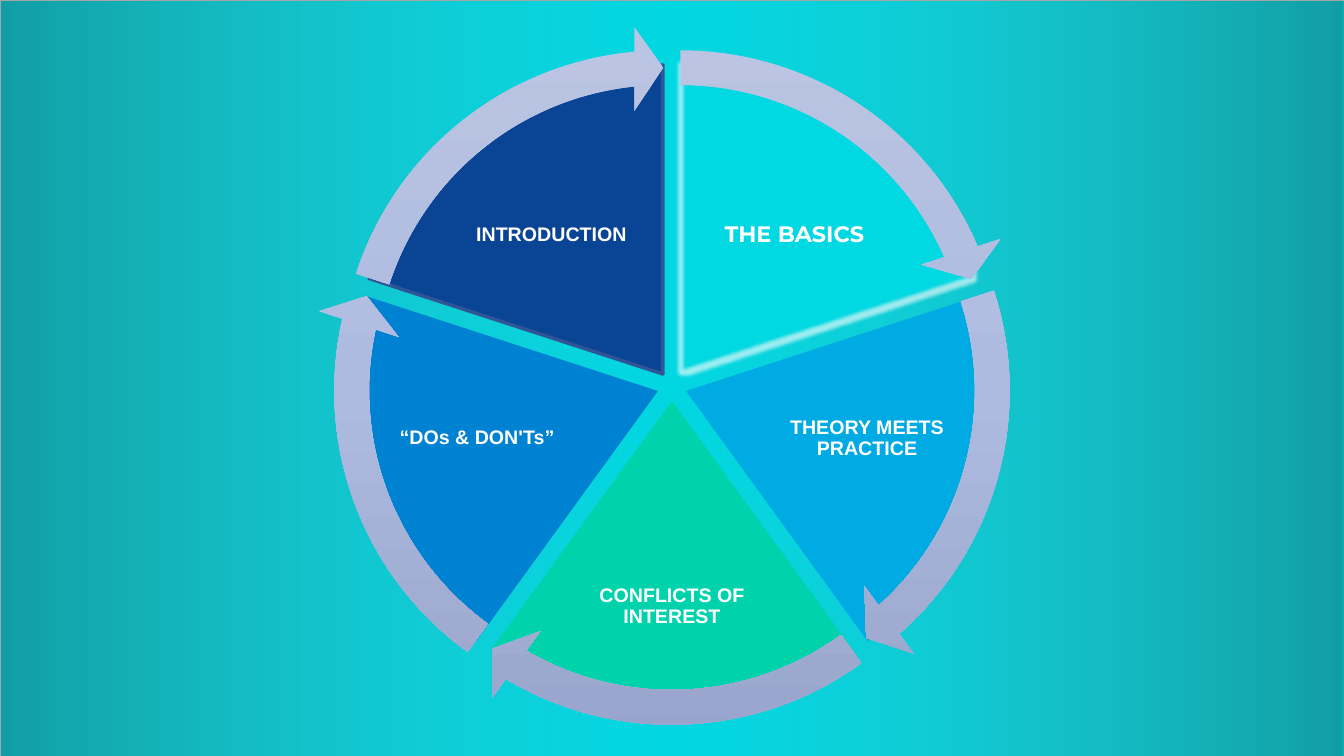
from math import cos, radians, sin

from lxml.etree import SubElement
from pptx import Presentation
from pptx.dml.color import RGBColor
from pptx.enum.shapes import MSO_SHAPE
from pptx.enum.text import MSO_ANCHOR, PP_ALIGN
from pptx.oxml.ns import qn
from pptx.util import Emu, Pt

WIDTH, HEIGHT = 1344, 756
CENTER_X, CENTER_Y = 672, 386
PIE_SIZE, ARROW_SIZE, OFFSET = 618, 695, 15
FULL_TURN, STEP, FIRST_START = 216, 43.2, 162
HEAD_ANGLE = 3.27
ARROW_STOPS = [(0, "BBC5E3", 100), (50, "AEBBE0", 100), (100, "98A4CB", 100)]
SHADE_STOPS = [(0, "312F2F", 34), (50, "A5A5A5", 0), (100, "312F2F", 34)]
SECTORS = [
    ("THE BASICS", "00D8E2", (695, 169, 199, 132), {"size": Pt(16), "name": "Montserrat"}),
    ("THEORY MEETS PRACTICE", "00AAE2", (775, 365, 184, 147), {}),
    ("CONFLICTS OF INTEREST", "00D2AB", (584, 526, 176, 162), {}),
    ("“DOs & DON'Ts”", "0082D2", (385, 365, 184, 147), {}),
    ("INTRODUCTION", "094495", (452, 169, 199, 132), {}),
]


def px(value):
    """Turn px into EMU."""
    return Emu(round(value * 9144000 / 1008))


def color(value):
    """Turn a hex string into a colour."""
    return RGBColor.from_string(value)


def apply(target, values):
    """Set every attribute in values on target."""
    for name, value in values.items():
        setattr(target, name, value)


def add_color(parent, value, opacity):
    """Append a colour with an opacity in percent."""
    element = SubElement(parent, qn("a:srgbClr"), val=value)
    if opacity < 100:
        SubElement(element, qn("a:alpha"), val=str(opacity * 1000))


class Wheel:
    """Draws the elements of the cycle wheel on one slide."""

    font = {"name": "Arial", "size": Pt(14), "bold": True}
    paragraph = {"alignment": PP_ALIGN.CENTER, "line_spacing": 0.9}
    frame = {"word_wrap": True, "vertical_anchor": MSO_ANCHOR.MIDDLE,
             "margin_left": px(2), "margin_right": px(2),
             "margin_top": px(2), "margin_bottom": px(2)}

    def __init__(self, slide):
        """Keep the current slide."""
        self.slide = slide

    def background(self, fill):
        """Fill the slide background."""
        background = self.slide.background.fill
        background.solid()
        background.fore_color.rgb = color(fill)

    def shape(self, kind, box, adjustments=(), fill=None, stops=(), angle=0, line=None):
        """Add a preset shape with a plain or gradient fill."""
        shape = self.slide.shapes.add_shape(kind, *map(px, box))
        shape.shadow.inherit = False
        for index, value in enumerate(adjustments):
            shape.adjustments[index] = value
        if fill:
            shape.fill.solid()
            shape.fill.fore_color.rgb = color(fill)
        else:
            self.gradient(shape, stops, angle)
        if line:
            shape.line.color.rgb = color(line[0])
            shape.line.width = Pt(line[1])
        else:
            shape.line.fill.background()
        return shape

    def gradient(self, shape, stops, angle):
        """Give a shape a linear gradient with the given stops."""
        shape.fill.gradient()
        shape.fill.gradient_angle = angle
        stop_list = shape._element.spPr.find(".//" + qn("a:gsLst"))
        for stop in list(stop_list):
            stop_list.remove(stop)
        for position, value, opacity in stops:
            stop = SubElement(stop_list, qn("a:gs"), pos=str(position * 1000))
            add_color(stop, value, opacity)

    def glow(self, shape, value, opacity, radius, edge):
        """Add a glow and a soft edge to a shape."""
        effects = shape._element.spPr.find(qn("a:effectLst"))
        glow = SubElement(effects, qn("a:glow"), rad=str(Pt(radius)))
        add_color(glow, value, opacity)
        SubElement(effects, qn("a:softEdge"), rad=str(Pt(edge)))

    def label(self, text, box, font):
        """Add a centred sector label."""
        frame = self.slide.shapes.add_textbox(*map(px, box)).text_frame
        apply(frame, self.frame)
        paragraph = frame.paragraphs[0]
        apply(paragraph, self.paragraph)
        run = paragraph.add_run()
        run.text = text
        apply(run.font, {**self.font, **font})
        run.font.color.rgb = color("FFFFFF")

    def sector_box(self, index, size):
        """Return the square of a sector, moved outward from the centre."""
        middle = radians(-54 + 72 * index)
        left = CENTER_X - size / 2 + OFFSET * cos(middle)
        top = CENTER_Y - size / 2 + OFFSET * sin(middle)
        return round(left), round(top), size, size

    def sector(self, index, fill, line=None):
        """Add one pie sector."""
        start = FIRST_START + STEP * index
        angles = [start % FULL_TURN, (start + STEP) % FULL_TURN]
        return self.shape(MSO_SHAPE.PIE, self.sector_box(index, PIE_SIZE), angles, fill, line=line)

    def arrow(self, index):
        """Add the curved arrow around one sector."""
        start = FIRST_START + STEP * index
        end = (start + STEP - HEAD_ANGLE) % FULL_TURN
        values = [0.05, HEAD_ANGLE, end, start % FULL_TURN, 0.06]
        self.shape(MSO_SHAPE.CIRCULAR_ARROW, self.sector_box(index, ARROW_SIZE), values,
                   stops=ARROW_STOPS, angle=270)


def main():
    """Build and save the slide."""
    presentation = Presentation()
    apply(presentation, {"slide_width": px(WIDTH), "slide_height": px(HEIGHT)})
    wheel = Wheel(presentation.slides.add_slide(presentation.slide_layouts[6]))
    wheel.background("00D8E2")
    wheel.shape(MSO_SHAPE.RECTANGLE, (0, 0, WIDTH, HEIGHT), stops=SHADE_STOPS, line=("A5A5A5", 0.5))
    for index, (text, fill, box, font) in enumerate(SECTORS):
        line = ("2F5597", 2.5) if text == "INTRODUCTION" else None
        pie = wheel.sector(index, fill, line)
        if text == "THE BASICS":
            wheel.glow(pie, "FFFFFF", 60, 5, 2.5)
        wheel.label(text, box, font)
    for index in range(len(SECTORS)):
        wheel.arrow(index)
    presentation.save("out.pptx")


if __name__ == "__main__":
    main()
